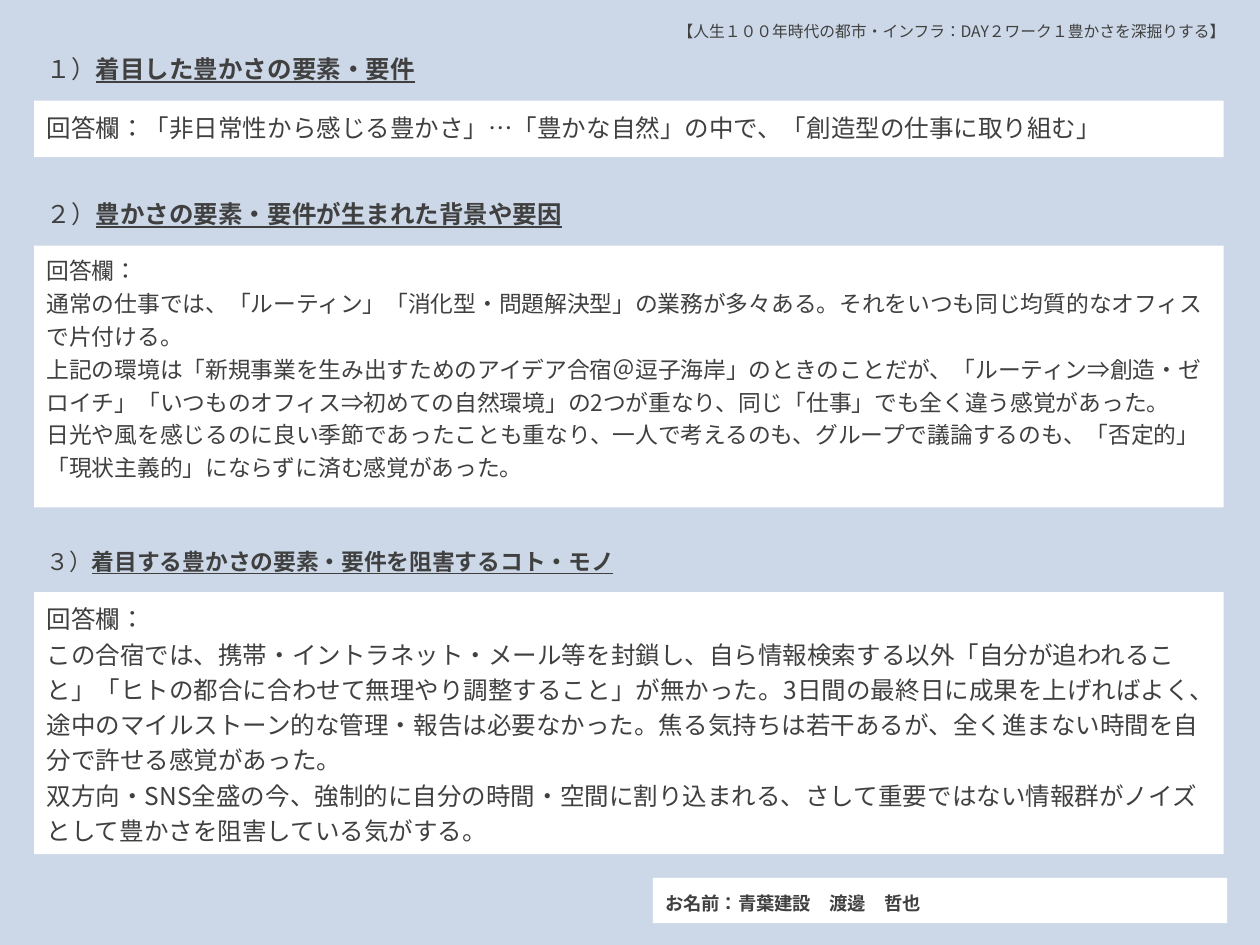
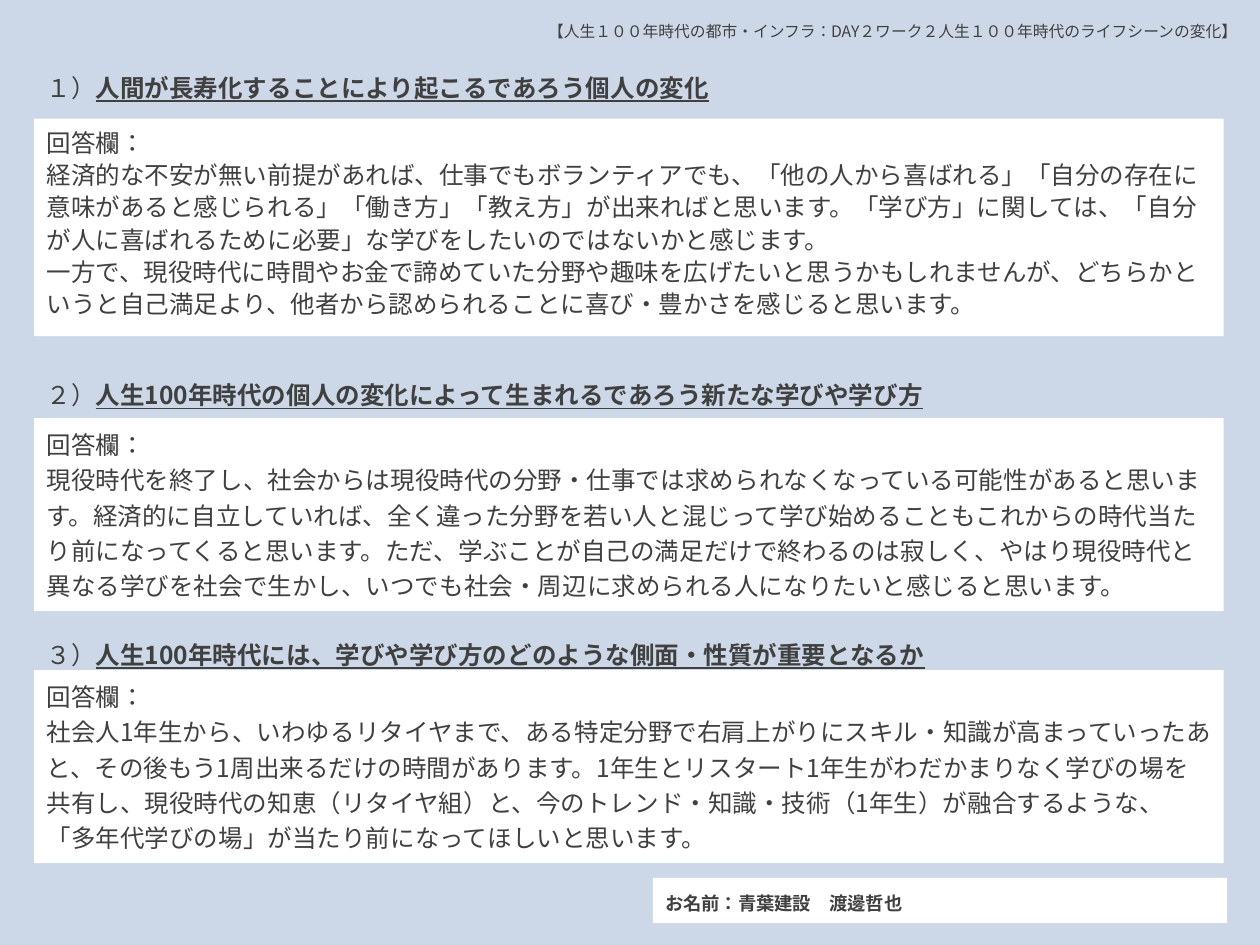
from dataclasses import dataclass
from typing import NamedTuple

from lxml.etree import SubElement
from pptx import Presentation
from pptx.dml.color import RGBColor
from pptx.enum.lang import MSO_LANGUAGE_ID
from pptx.enum.shapes import MSO_SHAPE
from pptx.enum.text import MSO_ANCHOR, PP_ALIGN
from pptx.oxml.ns import qn
from pptx.util import Cm, Pt


@dataclass(frozen=True)
class Theme:
    background: RGBColor = RGBColor(0xCC, 0xD8, 0xE7)
    panel: RGBColor = RGBColor(0xFF, 0xFF, 0xFF)
    ink: RGBColor = RGBColor(0x40, 0x40, 0x40)
    font: str = "Noto Sans CJK JP"
    body: float = 14
    compact: float = 13
    name: float = 10.5
    running_head: float = 9
    line_spacing: float = 1.2
    tight_spacing: float = 1.1


THEME = Theme()


class Box(NamedTuple):
    """A rectangle in centimetres."""
    left: float
    top: float
    width: float
    height: float

    def lengths(self):
        return [Cm(value) for value in self]


class Section(NamedTuple):
    """A numbered question with its answer; tops, widths and heights in centimetres."""
    question: str
    answers: list
    question_top: float
    question_width: float
    answer_top: float
    answer_height: float
    question_size: float = THEME.body
    answer_size: float = THEME.body
    spacing: float = THEME.line_spacing


NUMBERS = "１２３"
ANSWER_LABEL = "回答欄："
MARGIN = 0.69
ANSWER_WIDTH = 23.98
QUESTION_HEIGHT = 1.14
NAME_BOX = Box(13.16, 17.7, 11.58, 0.91)


def add_run(paragraph, text, size, **emphasis):
    run = paragraph.add_run()
    run.text = text
    font_format = {"name": THEME.font, "size": Pt(size),
                   "language_id": MSO_LANGUAGE_ID.JAPANESE, **emphasis}
    for attribute, value in font_format.items():
        setattr(run.font, attribute, value)
    run.font.color.rgb = THEME.ink
    east_asian = SubElement(run.font._element, qn("a:ea"))
    east_asian.set("typeface", THEME.font)


def write(frame, paragraphs, size, spacing=THEME.line_spacing, anchor=MSO_ANCHOR.TOP):
    """Fill the frame; each paragraph is a list of (text, emphasis) pairs."""
    frame.word_wrap = True
    frame.vertical_anchor = anchor
    for index, runs in enumerate(paragraphs):
        paragraph = frame.add_paragraph() if index else frame.paragraphs[0]
        paragraph.alignment = PP_ALIGN.LEFT
        paragraph.line_spacing = spacing
        for text, emphasis in runs:
            add_run(paragraph, text, size, **emphasis)


def add_panel(slide, box):
    panel = slide.shapes.add_shape(MSO_SHAPE.RECTANGLE, *box.lengths())
    panel.shadow.inherit = False
    panel.fill.solid()
    panel.fill.fore_color.rgb = THEME.panel
    panel.line.fill.background()
    return panel.text_frame


def add_label(slide, box):
    return slide.shapes.add_textbox(*box.lengths()).text_frame


def add_running_head(slide, text, box):
    write(add_label(slide, box), [[(f"【人生１００年時代の都市・インフラ：{text}】", {})]],
          THEME.running_head)


def add_section(slide, number, section):
    answer_box = Box(MARGIN, section.answer_top, ANSWER_WIDTH, section.answer_height)
    write(add_panel(slide, answer_box), [[(answer, {})] for answer in section.answers],
          section.answer_size, section.spacing)
    question_box = Box(MARGIN, section.question_top, section.question_width, QUESTION_HEIGHT)
    question = [(f"{number}）", {}), (section.question, {"bold": True, "underline": True})]
    write(add_label(slide, question_box), [question], section.question_size)


def add_name(slide, name):
    write(add_panel(slide, NAME_BOX), [[(f"お名前：青葉建設　{name}", {"bold": True})]],
          THEME.name, anchor=MSO_ANCHOR.MIDDLE)


def add_worksheet(deck, head, head_box, sections, name):
    slide = deck.slides.add_slide(deck.slide_layouts[6])
    slide.background.fill.solid()
    slide.background.fill.fore_color.rgb = THEME.background
    add_running_head(slide, head, head_box)
    for number, section in zip(NUMBERS, sections):
        add_section(slide, number, section)
    add_name(slide, name)


RICHNESS = [
    Section(
        "着目した豊かさの要素・要件",
        [ANSWER_LABEL + "「非日常性から感じる豊かさ」…「豊かな自然」の中で、「創造型の仕事に取り組む」"],
        0.84, 8.15, 2.03, 1.14),
    Section(
        "豊かさの要素・要件が生まれた背景や要因",
        [ANSWER_LABEL,
         "通常の仕事では、「ルーティン」「消化型・問題解決型」の業務が多々ある。"
         "それをいつも同じ均質的なオフィスで片付ける。",
         "上記の環境は「新規事業を生み出すためのアイデア合宿＠逗子海岸」のときのことだが、"
         "「ルーティン⇒創造・ゼロイチ」「いつものオフィス⇒初めての自然環境」の2つが重なり、"
         "同じ「仕事」でも全く違う感覚があった。",
         "日光や風を感じるのに良い季節であったことも重なり、一人で考えるのも、"
         "グループで議論するのも、「否定的」「現状主義的」にならずに済む感覚があった。"],
        3.76, 12.12, 4.95, 5.28, answer_size=THEME.compact),
    Section(
        "着目する豊かさの要素・要件を阻害するコト・モノ",
        [ANSWER_LABEL,
         "この合宿では、携帯・イントラネット・メール等を封鎖し、自ら情報検索する以外"
         "「自分が追われること」「ヒトの都合に合わせて無理やり調整すること」が無かった。"
         "3日間の最終日に成果を上げればよく、途中のマイルストーン的な管理・報告は必要なかった。"
         "焦る気持ちは若干あるが、全く進まない時間を自分で許せる感覚があった。",
         "双方向・SNS全盛の今、強制的に自分の時間・空間に割り込まれる、"
         "さして重要ではない情報群がノイズとして豊かさを阻害している気がする。"],
        10.8, 12.29, 11.94, 5.28, question_size=THEME.compact),
]

LIFE_SCENES = [
    Section(
        "人間が長寿化することにより起こるであろう個人の変化",
        [ANSWER_LABEL,
         "経済的な不安が無い前提があれば、仕事でもボランティアでも、「他の人から喜ばれる」"
         "「自分の存在に意味があると感じられる」「働き方」「教え方」が出来ればと思います。"
         "「学び方」に関しては、「自分が人に喜ばれるために必要」な学びをしたいのではないかと感じます。",
         "一方で、現役時代に時間やお金で諦めていた分野や趣味を広げたいと思うかもしれませんが、"
         "どちらかというと自己満足より、他者から認められることに喜び・豊かさを感じると思います。"],
        1.22, 14.22, 2.39, 4.39, spacing=THEME.tight_spacing),
    Section(
        "人生100年時代の個人の変化によって生まれるであろう新たな学びや学び方",
        [ANSWER_LABEL,
         "現役時代を終了し、社会からは現役時代の分野・仕事では求められなくなっている可能性が"
         "あると思います。経済的に自立していれば、全く違った分野を若い人と混じって学び始めることも"
         "これからの時代当たり前になってくると思います。ただ、学ぶことが自己の満足だけで終わるのは"
         "寂しく、やはり現役時代と異なる学びを社会で生かし、いつでも社会・周辺に求められる人に"
         "なりたいと感じると思います。"],
        7.42, 21.29, 8.43, 3.89),
    Section(
        "人生100年時代には、学びや学び方のどのような側面・性質が重要となるか",
        [ANSWER_LABEL,
         "社会人1年生から、いわゆるリタイヤまで、ある特定分野で右肩上がりにスキル・知識が"
         "高まっていったあと、その後もう1周出来るだけの時間があります。"
         "1年生とリスタート1年生がわだかまりなく学びの場を共有し、現役時代の知恵（リタイヤ組）と、"
         "今のトレンド・知識・技術（1年生）が融合するような、"
         "「多年代学びの場」が当たり前になってほしいと思います。"],
        12.65, 21.29, 13.51, 3.89),
]


def main():
    deck = Presentation()
    deck.slide_width, deck.slide_height = Cm(25.4), Cm(19.05)
    add_worksheet(deck, "DAY２ワーク１豊かさを深掘りする", Box(13.41, 0.23, 12.27, 0.76),
                  RICHNESS, "渡邊　哲也")
    add_worksheet(deck, "DAY２ワーク２人生１００年時代のライフシーンの変化",
                  Box(10.8, 0.23, 14.6, 0.91), LIFE_SCENES, "渡邊哲也")
    deck.save("out.pptx")


if __name__ == "__main__":
    main()
